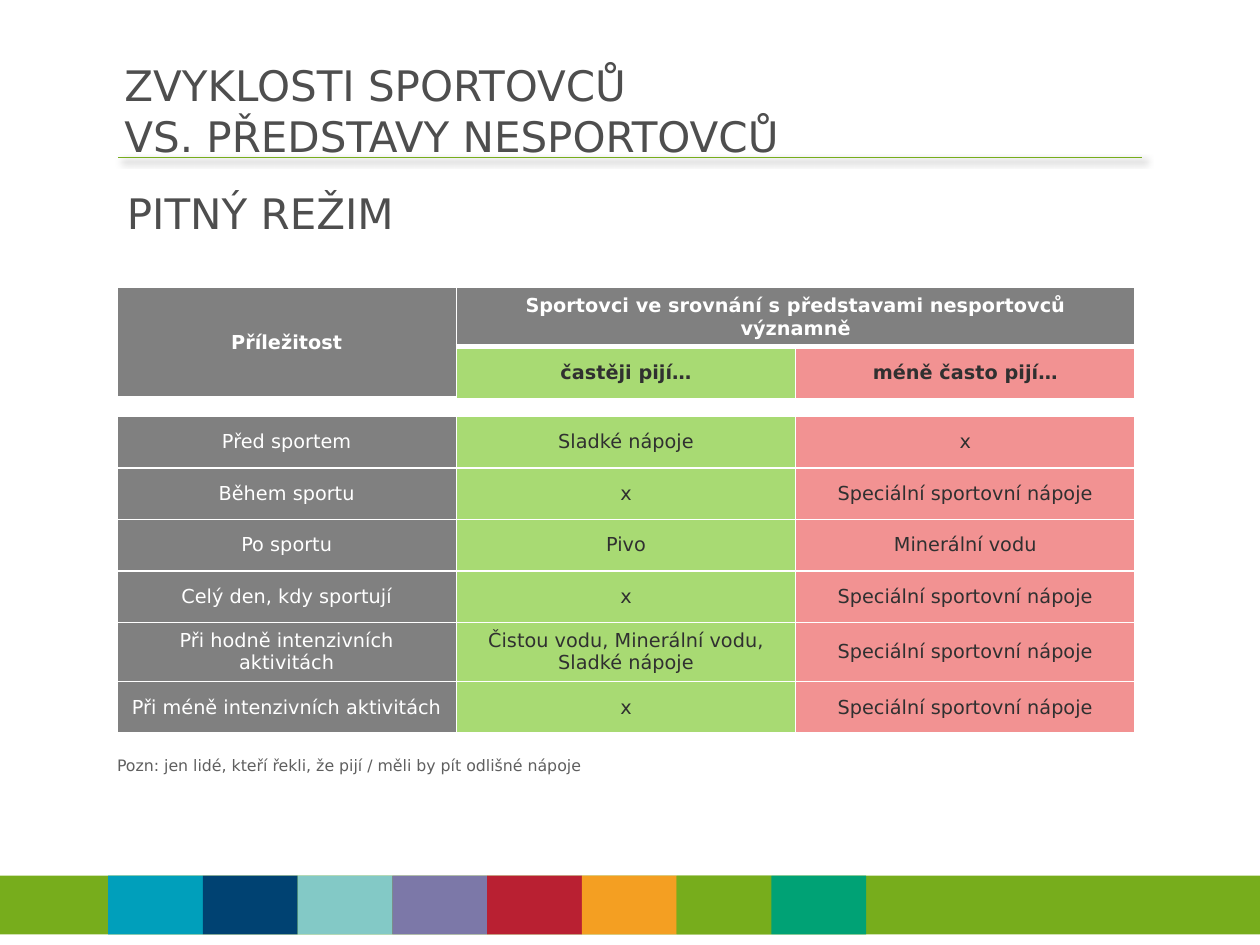
from lxml import etree
from pptx import Presentation
from pptx import util as u
from pptx.dml.color import RGBColor
from pptx.enum import shapes, text
from pptx.oxml.ns import qn

FONT = "DejaVu Sans"
WHITE, GRAY, GREEN, RED, DARK = "FFFFFF", "808080", "A8DA73", "F29292", "303030"
LEAF = "77AD1C"
STRIPES = ["009FBB", "004272", "83C9C6", "7C78A8", "B92032", "F49F22", LEAF, "00A275"]
COLUMN_COLORS = [(GRAY, WHITE), (GREEN, DARK), (RED, DARK)]
ROW_HEIGHTS = [1.19, 1.04, 0.36, 1.04, 1.04, 1.04, 1.04, 1.19, 1.04]
GAP_ROW = 2
SPECIAL = "Speciální sportovní nápoje"
HABITS = [
    ("Před sportem", "Sladké nápoje", "x"),
    ("Během sportu", "x", SPECIAL),
    ("Po sportu", "Pivo", "Minerální vodu"),
    ("Celý den, kdy sportují", "x", SPECIAL),
    ("Při hodně intenzivních aktivitách", "Čistou vodu, Minerální vodu, Sladké nápoje", SPECIAL),
    ("Při méně intenzivních aktivitách", "x", SPECIAL),
]


def rgb(color):
    return RGBColor.from_string(color)


def add_span(para, words, size, color, bold=False):
    span = para.add_run()
    span.text = words
    span.font.name = FONT
    span.font.size = u.Pt(size)
    span.font.bold = bold
    span.font.color.rgb = rgb(color)


def add_bar(page, left, width, color):
    bar = page.shapes.add_shape(
        shapes.MSO_SHAPE.RECTANGLE, u.Cm(left), u.Cm(17.65), u.Cm(width), u.Cm(1.19))
    bar.shadow.inherit = False
    bar.fill.solid()
    bar.fill.fore_color.rgb = rgb(color)
    bar.line.fill.background()


def add_rule(page):
    rule = page.shapes.add_connector(
        shapes.MSO_CONNECTOR.STRAIGHT, u.Cm(2.38), u.Cm(3.17), u.Cm(23.02), u.Cm(3.17))
    rule.line.color.rgb = rgb(LEAF)
    rule.line.width = u.Pt(0.75)
    effects = etree.SubElement(rule._element.spPr, qn("a:effectLst"))
    shadow = etree.SubElement(effects, qn("a:outerShdw"), blurRad=str(u.Pt(4)),
                              dist=str(u.Pt(3)), dir="2700000", rotWithShape="0")
    tint = etree.SubElement(shadow, qn("a:srgbClr"), val="000000")
    etree.SubElement(tint, qn("a:alpha"), val="40000")


def add_heading(page, left, top, lines):
    box = page.shapes.add_textbox(u.Cm(left), u.Cm(top), u.Cm(22.53), u.Cm(1.3))
    frame = box.text_frame
    frame.word_wrap = True
    frame.vertical_anchor = text.MSO_ANCHOR.MIDDLE
    para = frame.paragraphs[0]
    para.space_after = u.Pt(3)
    for number, line in enumerate(lines):
        if number:
            para.add_line_break()
        add_span(para, line, 24, "4E4E4E")


def add_note(page, words):
    box = page.shapes.add_textbox(u.Cm(2.11), u.Cm(15.11), u.Cm(10.49), u.Cm(0.64))
    box.text_frame.word_wrap = False
    box.text_frame.auto_size = text.MSO_AUTO_SIZE.SHAPE_TO_FIT_TEXT
    add_span(box.text_frame.paragraphs[0], words, 9, "5F5F5F")


def set_borders(cell, top, bottom):
    properties = cell._tc.get_or_add_tcPr()
    for side, width in (("L", 1), ("R", 1), ("T", top), ("B", bottom)):
        line = etree.SubElement(properties, qn(f"a:ln{side}"), w=str(u.Pt(width)))
        fill = etree.SubElement(line, qn("a:solidFill"))
        etree.SubElement(fill, qn("a:srgbClr"), val=WHITE)


def fill_cell(cell, lines, fill, color, bold=False):
    cell.fill.solid()
    cell.fill.fore_color.rgb = rgb(fill)
    cell.vertical_anchor = text.MSO_ANCHOR.MIDDLE
    frame = cell.text_frame
    for number, line in enumerate(lines):
        para = frame.add_paragraph() if number else frame.paragraphs[0]
        para.alignment = text.PP_ALIGN.CENTER
        add_span(para, line, 11, color, bold)


def clear_cell(cell):
    cell.fill.background()
    cell.margin_top = cell.margin_bottom = 0
    etree.SubElement(cell.text_frame.paragraphs[0]._p, qn("a:endParaRPr"), sz="600")


def add_habits_table(page):
    table = page.shapes.add_table(
        len(ROW_HEIGHTS), 3, u.Cm(2.36), u.Cm(5.8), u.Cm(20.52), u.Cm(sum(ROW_HEIGHTS))).table
    for column in table.columns:
        column.width = u.Cm(6.84)
    for number, height in enumerate(ROW_HEIGHTS):
        table.rows[number].height = u.Cm(height)
        for cell in table.rows[number].cells:
            set_borders(cell, 3 if number == 1 else 1, 3 if number == 0 else 1)

    table.cell(0, 0).merge(table.cell(1, 0))
    table.cell(0, 1).merge(table.cell(0, 2))
    fill_cell(table.cell(0, 0), ["Příležitost"], GRAY, WHITE, True)
    fill_cell(table.cell(0, 1), ["Sportovci ve srovnání s představami nesportovců", "významně"],
              GRAY, WHITE, True)
    fill_cell(table.cell(1, 1), ["častěji pijí…"], GREEN, DARK, True)
    fill_cell(table.cell(1, 2), ["méně často pijí…"], RED, DARK, True)
    for cell in table.rows[GAP_ROW].cells:
        clear_cell(cell)
    for row, habit in enumerate(HABITS, GAP_ROW + 1):
        for column, words in enumerate(habit):
            fill_cell(table.cell(row, column), [words], *COLUMN_COLORS[column])


def main():
    deck = Presentation()
    deck.slide_width, deck.slide_height = u.Cm(25.4), u.Cm(19.05)
    page = deck.slides.add_slide(deck.slide_layouts[6])
    add_rule(page)
    add_bar(page, 0, 25.4, LEAF)
    for number, color in enumerate(STRIPES):
        add_bar(page, 2.18 + 1.91 * number, 1.91, color)
    add_heading(page, 2.26, 1.57, ["ZVYKLOSTI SPORTOVCŮ", "VS. PŘEDSTAVY NESPORTOVCŮ"])
    add_habits_table(page)
    add_note(page, "Pozn: jen lidé, kteří řekli, že pijí / měli by pít odlišné nápoje")
    add_heading(page, 2.31, 3.63, ["PITNÝ REŽIM"])
    deck.save("out.pptx")


if __name__ == "__main__":
    main()
